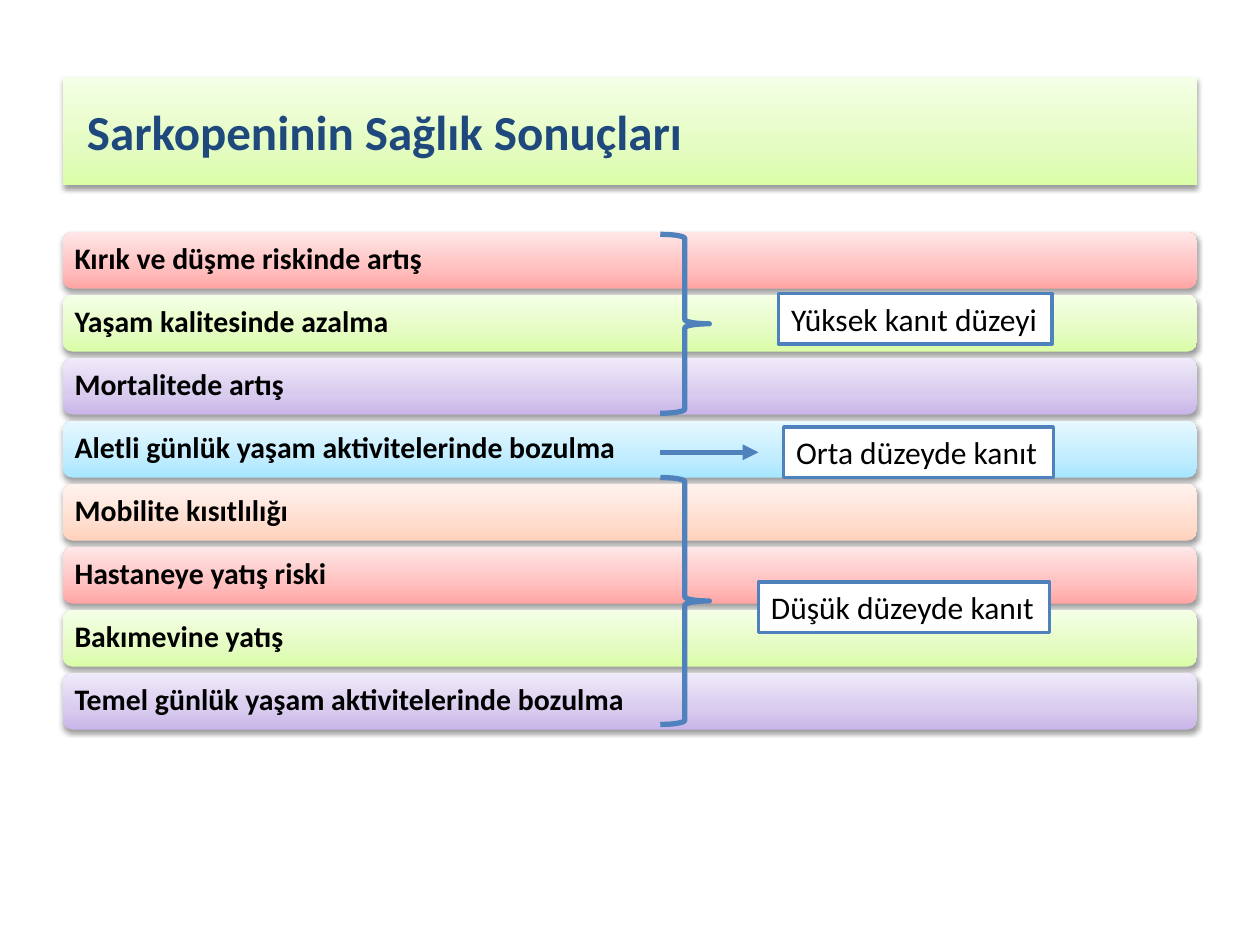
import pptx
import pptx.util
import pptx.dml.color
import pptx.enum.shapes
import pptx.enum.text
import pptx.oxml
import pptx.oxml.ns
from pptx.util import Inches

COLORS = {"text": "000000", "title": "1F497D", "line": "4F81BD", "box": "FFFFFF"}
GRADIENTS = {
    "red": ("FFA6A5", "FFC0BF", "FFE7E7"),
    "green": ("DAFDA7", "E4FCC2", "F5FFE7"),
    "purple": ("C9B5E8", "D8CBEE", "F0EAF9"),
    "blue": ("A7E6FF", "C1EDFF", "E7F8FF"),
    "orange": ("FFD2BD", "FFDED0", "FFF2ED"),
}
RGB = pptx.dml.color.RGBColor.from_string
SHAPE = pptx.enum.shapes.MSO_SHAPE
ANCHOR = pptx.enum.text.MSO_ANCHOR
ALIGN = pptx.enum.text.PP_ALIGN
NS = pptx.oxml.ns.nsdecls("a")


def style_band(sp, name):
    """Give a shape a three-stop upward gradient, a soft shadow and no outline."""
    stops = "".join(
        f'<a:gs pos="{pos}"><a:srgbClr val="{color}"/></a:gs>'
        for pos, color in zip((0, 35000, 100000), GRADIENTS[name]))
    spPr = sp._element.spPr
    spPr.append(pptx.oxml.parse_xml(
        f'<a:gradFill {NS} rotWithShape="1"><a:gsLst>{stops}</a:gsLst>'
        '<a:lin ang="16200000" scaled="1"/></a:gradFill>'))
    spPr.append(pptx.oxml.parse_xml(
        f'<a:effectLst {NS}><a:outerShdw blurRad="40000" dist="20000" dir="5400000" '
        'rotWithShape="0"><a:srgbClr val="000000"><a:alpha val="38000"/></a:srgbClr>'
        '</a:outerShdw></a:effectLst>'))
    sp.line.fill.background()


def write(sp, text, size, color, bold):
    tf = sp.text_frame
    tf.text = text
    tf.vertical_anchor = ANCHOR.MIDDLE
    p = tf.paragraphs[0]
    p.alignment = ALIGN.LEFT
    font = p.runs[0].font
    font.name, font.size, font.bold = "Calibri", pptx.util.Pt(size), bold
    font.color.rgb = RGB(color)


prs = pptx.Presentation()
prs.slide_width, prs.slide_height = Inches(10), Inches(7.5)
s = prs.slides.add_slide(prs.slide_layouts[5])

# Title
title = s.shapes.title
title.left, title.top, title.width, title.height = (
    Inches(0.5), Inches(0.61), Inches(9), Inches(0.86))
style_band(title, "green")
write(title, "Sarkopeninin Sağlık Sonuçları", 28, COLORS["title"], True)
title.text_frame.margin_left = Inches(0.19)

# Health outcomes, the colours repeating in order
outcomes = [
    "Kırık ve düşme riskinde artış",
    "Yaşam kalitesinde azalma",
    "Mortalitede artış",
    "Aletli günlük yaşam aktivitelerinde bozulma",
    "Mobilite kısıtlılığı",
    "Hastaneye yatış riski",
    "Bakımevine yatış",
    "Temel günlük yaşam aktivitelerinde bozulma",
]
names = list(GRADIENTS)
for i, text in enumerate(outcomes):
    sp = s.shapes.add_shape(SHAPE.ROUNDED_RECTANGLE, Inches(0.5),
                            Inches(1.84 + 0.5 * i), Inches(9), Inches(0.45))
    style_band(sp, names[i % len(names)])
    write(sp, text, 17, COLORS["text"], True)
    tf = sp.text_frame
    tf.margin_left = tf.margin_right = tf.margin_top = tf.margin_bottom = Inches(0.07)
    tf.paragraphs[0].line_spacing = 0.9

# Braces around the outcomes with high and low evidence
for top, height in ((1.86, 1.42), (3.79, 1.96)):
    brace = s.shapes.add_shape(SHAPE.RIGHT_BRACE, Inches(5.24), Inches(top),
                               Inches(0.39), Inches(height))
    brace.shadow.inherit = False
    brace.fill.background()
    brace.line.color.rgb = RGB(COLORS["line"])
    brace.line.width = pptx.util.Pt(3)

# Arrow to the medium evidence level
arrow = s.shapes.add_connector(pptx.enum.shapes.MSO_CONNECTOR.STRAIGHT,
                               Inches(5.24), Inches(3.59), Inches(6.02), Inches(3.59))
arrow.line.color.rgb = RGB(COLORS["line"])
arrow.line.width = pptx.util.Pt(3)
arrow.line._get_or_add_ln().append(
    pptx.oxml.parse_xml(f'<a:tailEnd {NS} type="triangle"/>'))
arrow._element.spPr.append(pptx.oxml.parse_xml(f"<a:effectLst {NS}/>"))

# Evidence levels
for text, left, top, width in (
        ("Yüksek kanıt düzeyi", 6.18, 2.33, 2.17),
        ("Orta düzeyde kanıt", 6.22, 3.39, 2.14),
        ("Düşük düzeyde kanıt", 6.02, 4.62, 2.31)):
    box = s.shapes.add_textbox(Inches(left), Inches(top), Inches(width), Inches(0.4))
    box.fill.solid()
    box.fill.fore_color.rgb = RGB(COLORS["box"])
    box.line.color.rgb = RGB(COLORS["line"])
    box.line.width = pptx.util.Pt(2)
    write(box, text, 18, COLORS["text"], False)
    box.text_frame.word_wrap = True

prs.save("out.pptx")
